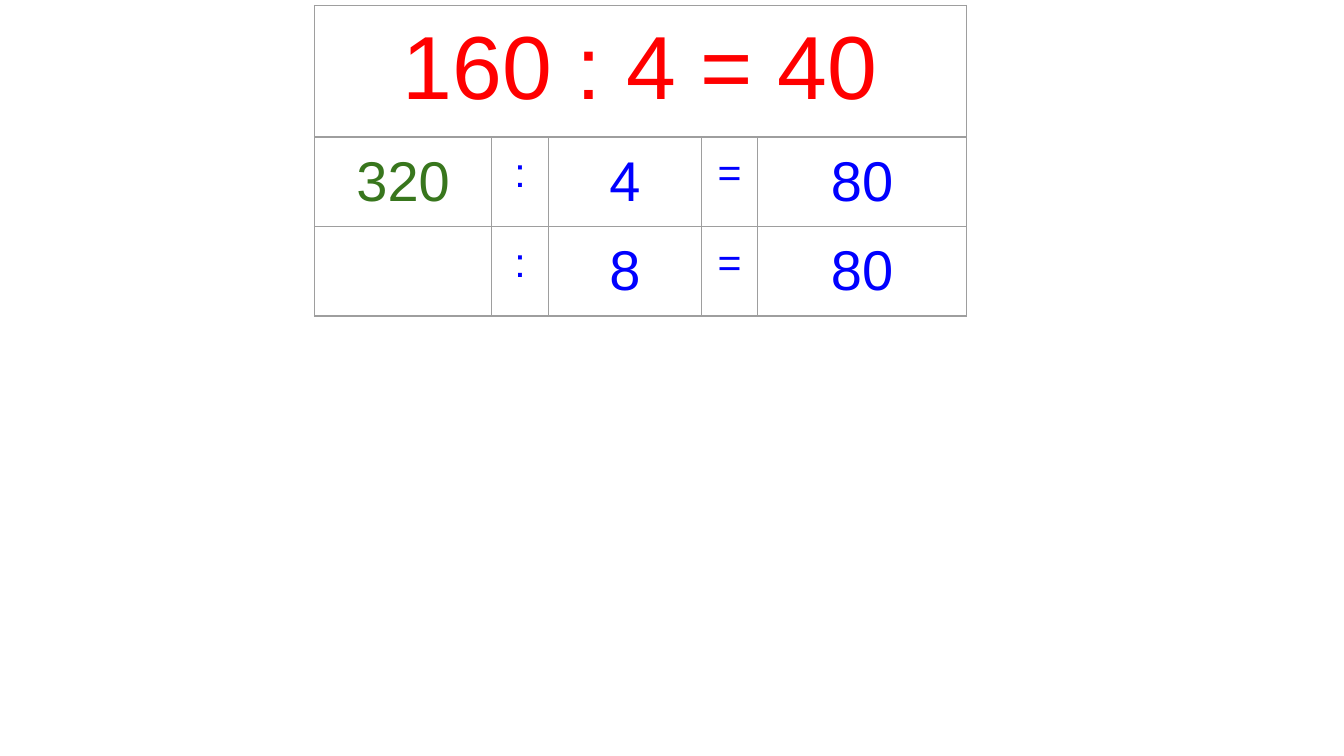
from lxml.etree import SubElement
from pptx import Presentation
from pptx.dml.color import RGBColor
from pptx.enum.text import PP_ALIGN
from pptx.oxml.ns import qn
from pptx.util import Inches, Pt

RED = RGBColor(0xFF, 0x00, 0x00)
GREEN = RGBColor(0x38, 0x76, 0x1D)
BLUE = RGBColor(0x00, 0x00, 0xFF)
GRAY = RGBColor(0x9E, 0x9E, 0x9E)

# Content: the known result, then the sums that follow from it
HEAD = "160 : 4 = 40"
SUMS = [("320", ":", "4", "=", "80"),
        ("", ":", "8", "=", "80")]

LEFT, TOP = 2.34, 0.04
COLS = [1.32, 0.42, 1.14, 0.42, 1.55]
ROWS = [0.98, 0.59, 0.61]


def add_edges(cell):
    """Draw a thin gray line on all four sides of a cell."""
    props = cell._tc.get_or_add_tcPr()
    for tag in ("a:lnL", "a:lnR", "a:lnT", "a:lnB"):
        line = SubElement(props, qn(tag), w=str(Pt(0.75)))
        fill = SubElement(line, qn("a:solidFill"))
        SubElement(fill, qn("a:srgbClr"), val=str(GRAY))


def put_text(cell, text, size, color):
    cell.text = text
    para = cell.text_frame.paragraphs[0]
    para.alignment = PP_ALIGN.CENTER
    para.font.name = "Arial"
    para.font.size = Pt(size)
    para.font.bold = False
    para.font.color.rgb = color


# A 16:9 slide
deck = Presentation()
deck.slide_width = Inches(10)
deck.slide_height = Inches(10 * 9 / 16)
slide = deck.slides.add_slide(deck.slide_layouts[6])

# Table grid
table = slide.shapes.add_table(
    len(ROWS), len(COLS), Inches(LEFT), Inches(TOP),
    Inches(sum(COLS)), Inches(sum(ROWS))).table
table.first_row = table.horz_banding = False
for col, width in zip(table.columns, COLS):
    col.width = Inches(width)
for row, height in zip(table.rows, ROWS):
    row.height = Inches(height)

# Cell margins, borders and fill
for cell in table.iter_cells():
    cell.margin_left = cell.margin_right = Inches(0.1)
    cell.margin_top = cell.margin_bottom = Inches(0.1)
    add_edges(cell)
    cell.fill.background()

# Heading across all columns
table.cell(0, 0).merge(table.cell(0, len(COLS) - 1))
put_text(table.cell(0, 0), HEAD, 48, RED)

# Sums: signs are smaller, the first number is green
for r, terms in enumerate(SUMS, 1):
    for c, term in enumerate(terms):
        if term:
            size = 22 if term in ":=" else 30
            put_text(table.cell(r, c), term, size, BLUE if c else GREEN)

deck.save("out.pptx")
